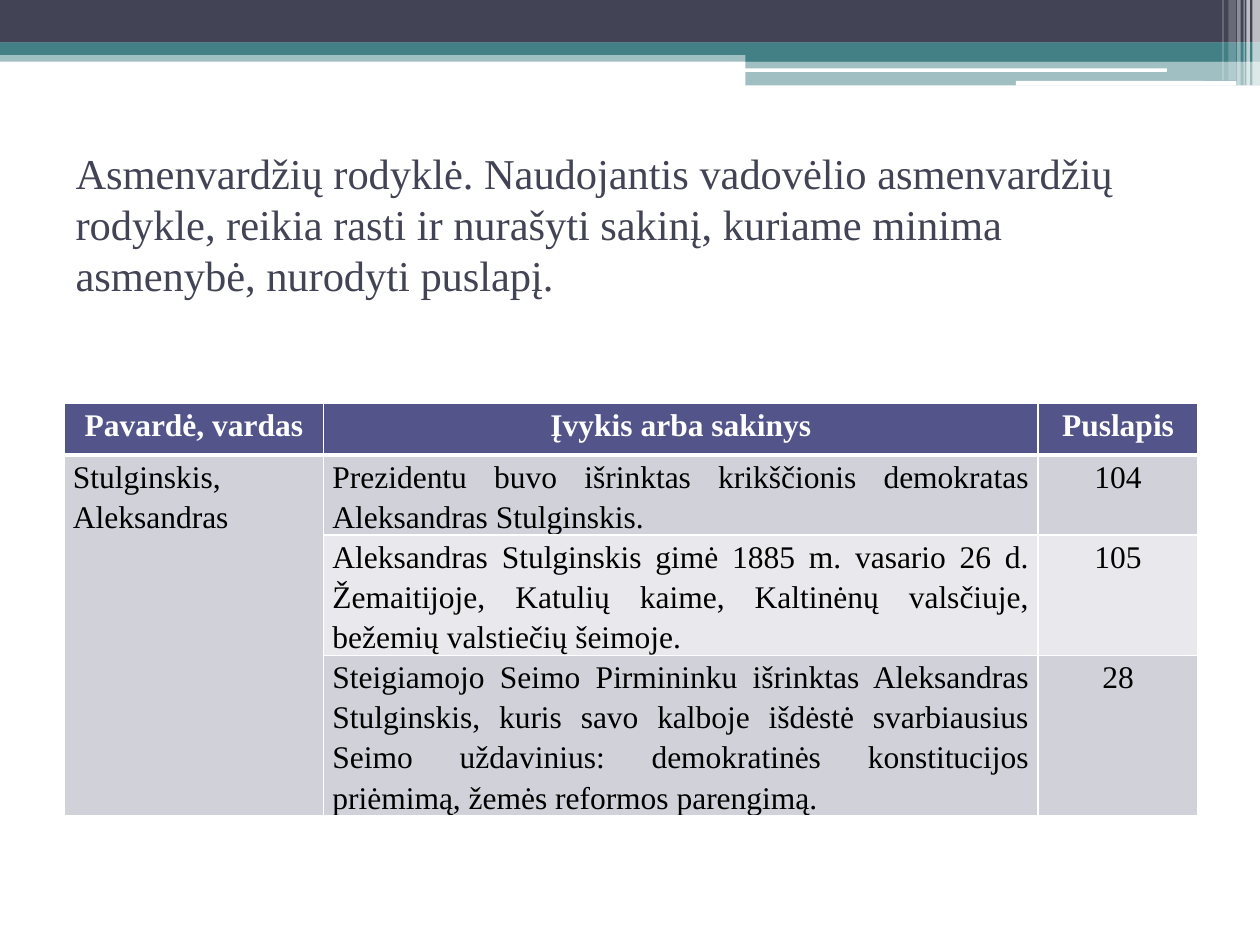
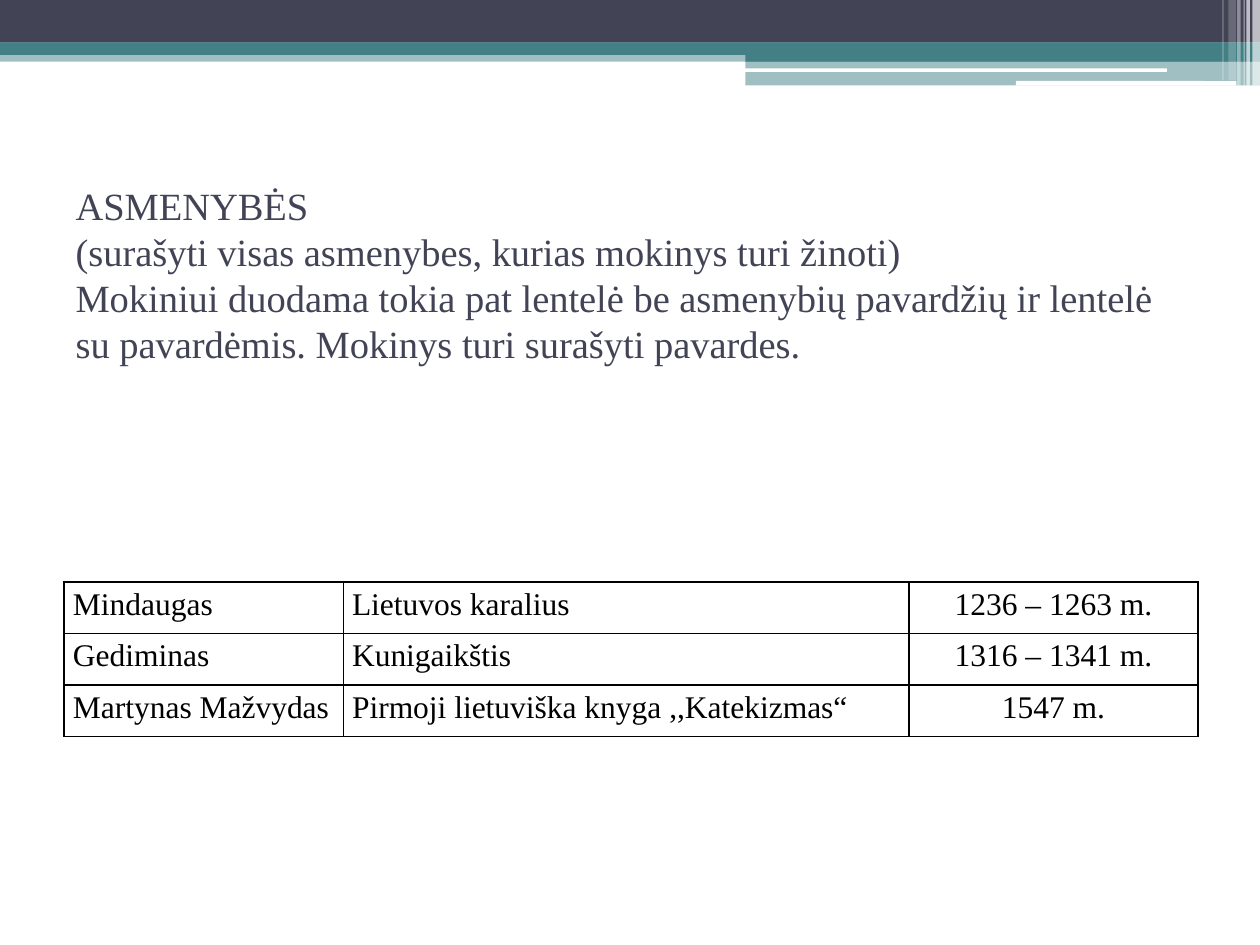
"""Build two history lesson slides with a shared banded layout, titles and tables."""
from dataclasses import dataclass
from typing import Optional

from lxml.etree import SubElement
from pptx import Presentation
from pptx.dml.color import RGBColor
from pptx.enum.shapes import MSO_SHAPE as SHAPE
from pptx.enum.text import MSO_ANCHOR as ANCHOR, MSO_AUTO_SIZE as AUTO, PP_ALIGN as ALIGN
from pptx.oxml import parse_xml
from pptx.oxml.ns import nsdecls, qn
from pptx.util import Pt

FONT = "Times New Roman"
COLORS = {
    "navy": "424456",
    "teal": "438086",
    "white": "FFFFFF",
    "black": "000000",
    "header": "53548A",
    "odd": "D1D1DA",
    "even": "E9E9ED",
}
LEFT, WIDTH = 36, 648
TABLE_LEFT = 36.7
ROW_HEIGHT = 29.5


@dataclass(frozen=True)
class Band:
    left: float
    top: float
    width: float
    height: float
    color: str
    opacity: int = 100
    rounded: bool = False


@dataclass(frozen=True)
class Title:
    text: str
    top: float
    height: float
    size: float
    line: float
    inset: float = 0


@dataclass(frozen=True)
class Grid:
    top: float
    widths: tuple[float, ...]
    rows: list[tuple[str, ...]]
    border: str
    has_header: bool = False
    merge_rows: Optional[tuple[int, int]] = None


BANDS = [
    Band(0, 28.8, 720, 6.5, "teal", 50),
    Band(0, 0, 720, 24.4, "navy"),
    Band(0, 24.2, 720, 7.2, "teal"),
    Band(426, 28, 294, 7.2, "teal"),
    Band(426, 34.9, 294, 14, "teal", 50),
    Band(425.6, 39.1, 241.2, 2, "white", rounded=True),
    Band(580.5, 46.3, 126, 2.7, "white", rounded=True),
    Band(715.7, 0, 4.3, 49, "white", 65),
    Band(712.2, 0, 2, 49, "white", 65),
    Band(710.6, 0, 0.7, 49, "white", 60),
    Band(707, 0, 2, 49, "white", 40),
    Band(702, 0, 4.3, 46, "white", 20),
    Band(698.5, 0, 0.7, 46, "white", 30),
]

INDEX_TITLE = Title(
    "Asmenvardžių rodyklė. Naudojantis vadovėlio asmenvardžių rodykle, reikia rasti "
    "ir nurašyti sakinį, kuriame minima asmenybė, nurodyti puslapį.",
    84, 123, 24.3, 29.1,
)
INDEX_GRID = Grid(
    230.5, (148.3, 408.2, 91.5),
    [
        ("Pavardė, vardas", "Įvykis arba sakinys", "Puslapis"),
        ("Stulginskis, Aleksandras",
         "Prezidentu buvo išrinktas krikščionis demokratas Aleksandras Stulginskis.", "104"),
        ("", "Aleksandras Stulginskis gimė 1885 m. vasario 26 d. Žemaitijoje, Katulių "
         "kaime, Kaltinėnų valsčiuje, bežemių valstiečių šeimoje.", "105"),
        ("", "Steigiamojo Seimo Pirmininku išrinktas Aleksandras Stulginskis, kuris savo "
         "kalboje išdėstė svarbiausius Seimo uždavinius: demokratinės konstitucijos "
         "priėmimą, žemės reformos parengimą.", "28"),
    ],
    "white", has_header=True, merge_rows=(1, 3),
)
PEOPLE_TITLE = Title(
    "ASMENYBĖS\n(surašyti visas asmenybes, kurias mokinys turi žinoti)\n"
    "Mokiniui duodama tokia pat lentelė be asmenybių pavardžių ir lentelė su "
    "pavardėmis. Mokinys turi surašyti pavardes.",
    90, 180, 22, 26.3, inset=14,
)
PEOPLE_GRID = Grid(
    332.5, (159.5, 323.2, 165.3),
    [
        ("Mindaugas", "Lietuvos karalius", "1236 – 1263 m."),
        ("Gediminas", "Kunigaikštis", "1316 – 1341 m."),
        ("Martynas Mažvydas", "Pirmoji lietuviška knyga ,,Katekizmas“", "1547 m."),
    ],
    "black",
)


def rgb(name: str) -> RGBColor:
    return RGBColor.from_string(COLORS[name])


def format_runs(p, size: float, color: str, bold: bool = False) -> None:
    for r in p.runs:
        r.font.name = FONT
        r.font.size = Pt(size)
        r.font.bold = bold
        r.font.color.rgb = rgb(color)


def add_band(slide, band: Band):
    kind = SHAPE.ROUNDED_RECTANGLE if band.rounded else SHAPE.RECTANGLE
    sp = slide.shapes.add_shape(
        kind, Pt(band.left), Pt(band.top), Pt(band.width), Pt(band.height))
    sp.shadow.inherit = False
    sp.line.fill.background()
    sp.fill.solid()
    sp.fill.fore_color.rgb = rgb(band.color)
    if band.opacity < 100:
        color = next(sp.element.spPr.iter(qn("a:srgbClr")))
        SubElement(color, qn("a:alpha")).set("val", str(band.opacity * 1000))
    return sp


def move_bands_to_layout(slide) -> None:
    tree = slide.slide_layout.placeholders[0].element.getparent()
    for i, band in enumerate(BANDS):
        element = add_band(slide, band).element
        element.nvSpPr.cNvPr.set("id", str(100 + i))
        tree.insert(2 + i, element)


def set_title(slide, title: Title) -> None:
    sp = slide.shapes.title
    sp.left, sp.top = Pt(LEFT), Pt(title.top)
    sp.width, sp.height = Pt(WIDTH), Pt(title.height)
    tf = sp.text_frame
    tf.word_wrap = True
    tf.auto_size = AUTO.NONE
    tf.vertical_anchor = ANCHOR.TOP
    tf.margin_top, tf.margin_bottom = Pt(title.inset), Pt(0)
    p = tf.paragraphs[0]
    p.text = title.text
    p.alignment = ALIGN.LEFT
    p.line_spacing = Pt(title.line)
    format_runs(p, title.size, "navy")


def set_borders(cell, color: str, bottom: int) -> None:
    tc_pr = cell._tc.get_or_add_tcPr()
    for i, side in enumerate("LRTB"):
        width = Pt(bottom if side == "B" else 1)
        tc_pr.insert(i, parse_xml(
            f'<a:ln{side} {nsdecls("a")} w="{width}"><a:solidFill>'
            f'<a:srgbClr val="{COLORS[color]}"/></a:solidFill></a:ln{side}>'))


def fill_cell(cell, text: str, row: int, is_last: bool, grid: Grid) -> None:
    is_header = grid.has_header and row == 0
    cell.margin_left = cell.margin_right = Pt(5)
    cell.margin_top = cell.margin_bottom = Pt(0)
    if grid.has_header:
        cell.fill.solid()
        band = "odd" if row % 2 else "even"
        cell.fill.fore_color.rgb = rgb("header" if is_header else band)
    else:
        cell.fill.background()
    set_borders(cell, grid.border, 3 if is_header else 1)
    if text:
        p = cell.text_frame.paragraphs[0]
        p.text = text
        p.alignment = ALIGN.CENTER if is_header or is_last else ALIGN.JUSTIFY
        p.line_spacing = 1.15
        format_runs(p, 18, "white" if is_header else "black", is_header)


def add_grid(slide, grid: Grid) -> None:
    n_rows, n_cols = len(grid.rows), len(grid.widths)
    table = slide.shapes.add_table(
        n_rows, n_cols, Pt(TABLE_LEFT), Pt(grid.top),
        Pt(sum(grid.widths)), Pt(ROW_HEIGHT * n_rows)).table
    table.first_row = grid.has_header
    table.horz_banding = grid.has_header
    for column, width in zip(table.columns, grid.widths):
        column.width = Pt(width)
    if grid.merge_rows:
        first, last = grid.merge_rows
        table.cell(first, 0).merge(table.cell(last, 0))
    for row, texts in enumerate(grid.rows):
        for col, text in enumerate(texts):
            fill_cell(table.cell(row, col), text, row, col == n_cols - 1, grid)


def main() -> None:
    prs = Presentation()
    prs.slide_width, prs.slide_height = Pt(720), Pt(540)
    layout = prs.slide_layouts[5]
    pages = [(INDEX_TITLE, INDEX_GRID), (PEOPLE_TITLE, PEOPLE_GRID)]
    for i, (title, grid) in enumerate(pages):
        slide = prs.slides.add_slide(layout)
        if i == 0:
            move_bands_to_layout(slide)
        set_title(slide, title)
        add_grid(slide, grid)
    prs.save("out.pptx")


if __name__ == "__main__":
    main()
